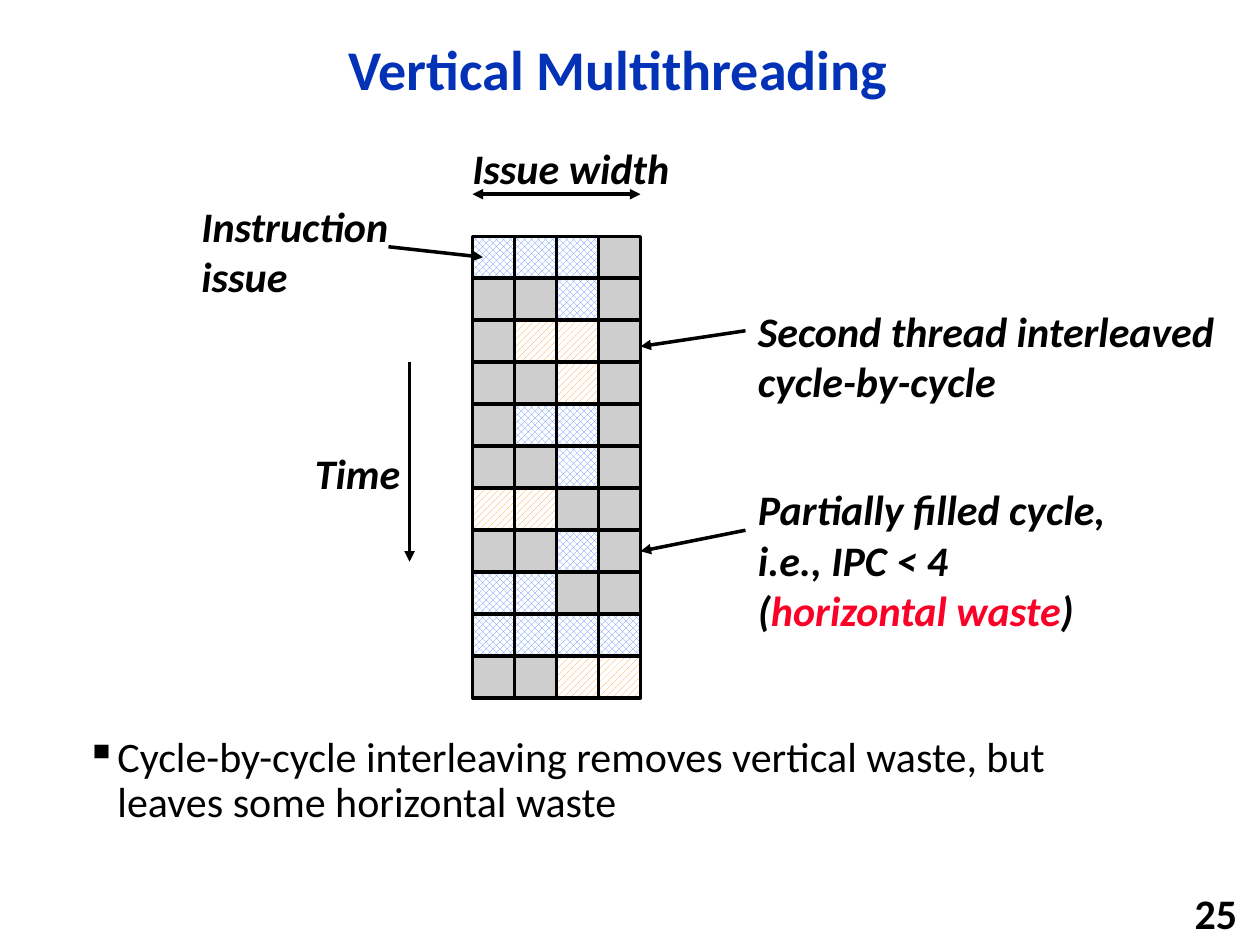
from dataclasses import dataclass

from lxml import etree
from pptx import Presentation
from pptx.dml.color import RGBColor
from pptx.enum.dml import MSO_PATTERN
from pptx.enum.shapes import MSO_CONNECTOR, MSO_SHAPE
from pptx.enum.text import MSO_ANCHOR, PP_ALIGN
from pptx.oxml.ns import qn
from pptx.util import Inches, Pt

RECT = MSO_SHAPE.RECTANGLE
STRAIGHT = MSO_CONNECTOR.STRAIGHT
MIDDLE, TOP = MSO_ANCHOR.MIDDLE, MSO_ANCHOR.TOP
LEFT, CENTER, RIGHT = PP_ALIGN.LEFT, PP_ALIGN.CENTER, PP_ALIGN.RIGHT
RIGHT_SIDE = 3

COLUMNS, ROWS = 240, 180
CELL = 8
GRID_LEFT, GRID_TOP = 90, 45
FIRST, SECOND, IDLE = "A", "B", "."
ISSUE_SLOTS = ["AAA.", "..A.", ".BB.", "..B.", ".AA.", "..A.",
               "BB..", "..A.", "AA..", "AAAA", "..BB"]
PARTIAL_CYCLE = 7


@dataclass(frozen=True)
class Theme:
    font: str = "Calibri"
    title_size: int = 32
    text_size: int = 24
    line_width: int = 2
    ink: str = "000000"
    paper: str = "FFFFFF"
    title: str = "0332B7"
    accent: str = "FC0128"
    idle: str = "CECECE"
    first_thread: str = "618FFD"
    second_thread: str = "FF9933"


THEME = Theme()
PATTERNS = {
    FIRST: (MSO_PATTERN.SOLID_DIAMOND, THEME.first_thread),
    SECOND: (MSO_PATTERN.WIDE_UPWARD_DIAGONAL, THEME.second_thread),
}


def rgb(code):
    return RGBColor.from_string(code)


def units(*counts):
    return [Inches(n / 24) for n in counts]


def style_runs(p, color=THEME.ink, size=THEME.text_size, bold=True, italic=False):
    for r in p.runs:
        r.font.name = THEME.font
        r.font.size = Pt(size)
        r.font.bold = bold
        r.font.italic = italic
        r.font.color.rgb = rgb(color)


def add_text(s, text, box, anchor=TOP, align=LEFT, wrap=True, **style):
    tf = s.shapes.add_textbox(*units(*box)).text_frame
    tf.word_wrap = wrap
    tf.vertical_anchor = anchor
    tf.text = text
    for p in tf.paragraphs:
        p.alignment = align
        style_runs(p, **style)
    return tf


def add_label(s, text, box, wrap=True):
    return add_text(s, text, box, wrap=wrap, italic=True)


def add_bullet(s, text, box):
    p = add_text(s, text, box, bold=False).paragraphs[0]
    p.line_spacing = 0.9
    p.space_before = Pt(0.3 * THEME.text_size)
    pPr = p._p.get_or_add_pPr()
    pPr.set("marL", str(Inches(0.25)))
    pPr.set("indent", str(-Inches(0.25)))
    etree.SubElement(pPr, qn("a:buChar")).set("char", "▪")


def add_slot(s, kind, column, row):
    box = units(GRID_LEFT + column * CELL, GRID_TOP + row * CELL, CELL, CELL)
    sp = s.shapes.add_shape(RECT, *box)
    sp.shadow.inherit = False
    sp.line.color.rgb = rgb(THEME.ink)
    sp.line.width = Pt(THEME.line_width)
    if kind == IDLE:
        sp.fill.solid()
        sp.fill.fore_color.rgb = rgb(THEME.idle)
    else:
        pattern, color = PATTERNS[kind]
        sp.fill.patterned()
        sp.fill.pattern = pattern
        sp.fill.fore_color.rgb = rgb(color)
        sp.fill.back_color.rgb = rgb(THEME.paper)
    return sp


def add_issue_grid(s):
    return [[add_slot(s, kind, column, row) for column, kind in enumerate(cycle)]
            for row, cycle in enumerate(ISSUE_SLOTS)]


def add_arrow(s, start, end, both=False):
    line = s.shapes.add_connector(STRAIGHT, *units(*start, *end))
    line.line.color.rgb = rgb(THEME.ink)
    line.line.width = Pt(THEME.line_width)
    ln = line.line._get_or_add_ln()
    for tag in ("a:headEnd", "a:tailEnd") if both else ("a:tailEnd",):
        etree.SubElement(ln, qn(tag)).set("type", "triangle")
    etree.SubElement(line._element.spPr, qn("a:effectLst"))
    return line


def main():
    prs = Presentation()
    prs.slide_width, prs.slide_height = units(COLUMNS, ROWS)
    s = prs.slides.add_slide(prs.slide_layouts[6])

    title = add_text(s, "Vertical Multithreading", (22, 4, 191.5, 19.5), MIDDLE, CENTER,
                     color=THEME.title, size=THEME.title_size)
    title.paragraphs[0].line_spacing = 0.9
    add_text(s, "25", (188, 170, 50, 7.7), MIDDLE, RIGHT, wrap=False)
    add_bullet(s, "Cycle-by-cycle interleaving removes vertical waste, "
                  "but leaves some horizontal waste", (14, 139, 208, 22))

    slots = add_issue_grid(s)
    grid_right = GRID_LEFT + CELL * len(ISSUE_SLOTS[0])

    add_arrow(s, (GRID_LEFT, 37), (grid_right, 37), both=True)
    add_label(s, "Issue width", (87.6, 26, 44.6, 12), wrap=False)
    add_arrow(s, (78, 69), (78, 107))
    add_label(s, "Time", (57.6, 84, 23.3, 12), wrap=False)
    add_label(s, "Instruction issue", (36, 37, 50.4, 22))
    add_arrow(s, (74, 47), (92, 49))
    add_label(s, "Second thread interleaved cycle-by-cycle", (142, 57, 92, 22))
    add_arrow(s, (142, 63), (grid_right, 66))

    note = add_label(s, "Partially filled cycle, i.e., IPC < 4", (142, 91, 84, 31.5))
    p = note.add_paragraph()
    for text in ("(", "horizontal waste", ")"):
        p.add_run().text = text
    style_runs(p, italic=True)
    p.runs[1].font.color.rgb = rgb(THEME.accent)
    arrow = add_arrow(s, (142, 101), (grid_right, 105))
    arrow.end_connect(slots[PARTIAL_CYCLE][-1], RIGHT_SIDE)

    prs.save("out.pptx")


if __name__ == "__main__":
    main()
